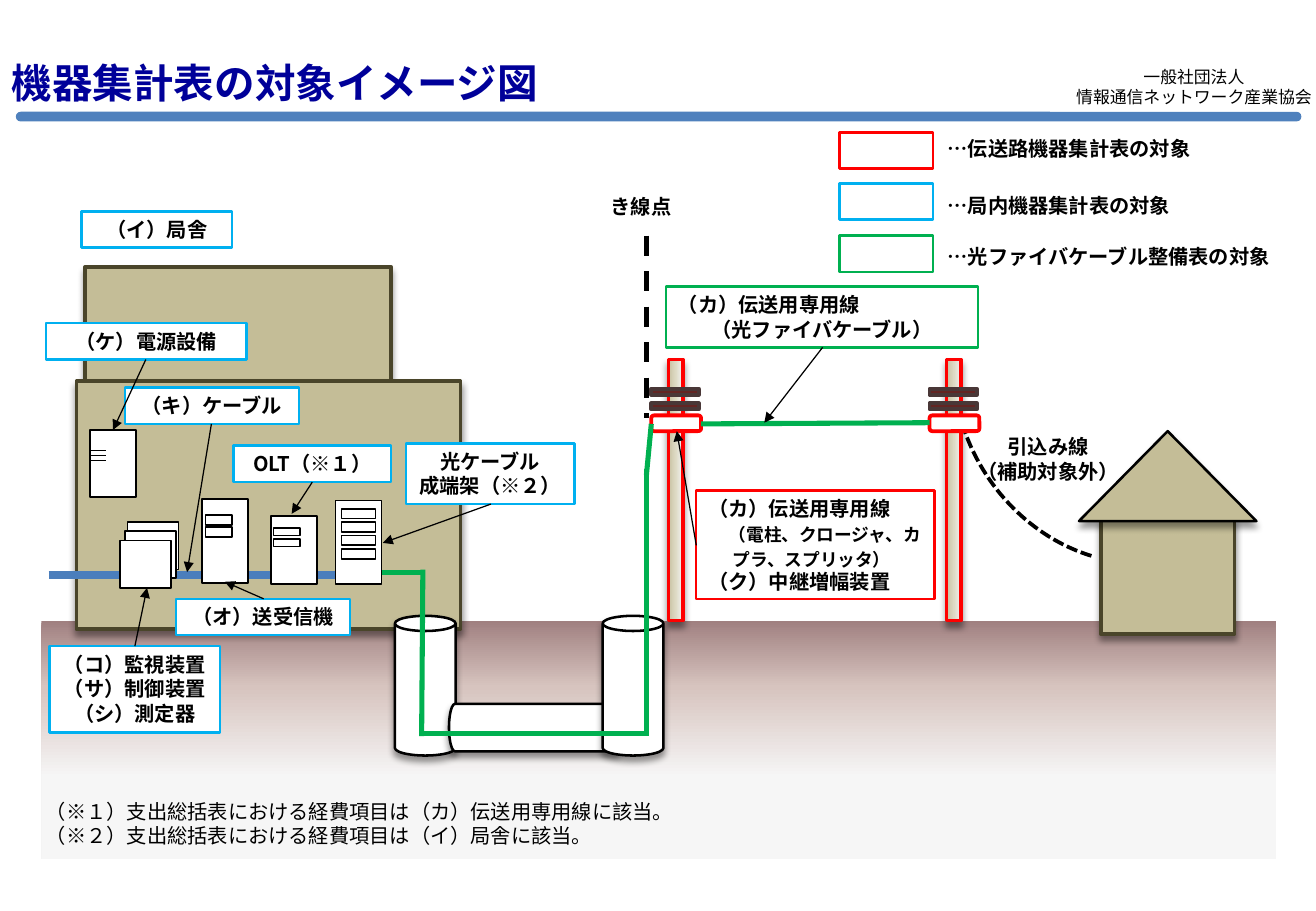
from dataclasses import dataclass

from lxml.etree import SubElement
from pptx import Presentation
from pptx.dml.color import RGBColor
from pptx.enum.dml import MSO_LINE
from pptx.enum.shapes import MSO_CONNECTOR, MSO_SHAPE
from pptx.enum.text import MSO_ANCHOR, PP_ALIGN
from pptx.oxml import parse_xml
from pptx.oxml.ns import nsdecls, qn
from pptx.util import Inches, Pt


@dataclass
class Theme:
    font: str = "Noto Sans CJK JP"
    title: float = 24
    body: float = 12
    detail: float = 10.5
    small: float = 10
    leading: float = 1.2
    black: str = "000000"
    white: str = "FFFFFF"
    navy: str = "000099"
    bar: str = "4F81BD"
    cable: str = "4B7EBC"
    red: str = "FF0000"
    blue: str = "00B0F0"
    green: str = "00B050"
    wall: str = "C4BD97"
    wall_edge: str = "4A452A"
    arm: str = "632523"
    arm_edge: str = "493737"
    ground: tuple = ((0, "A08080"), (28, "D7C4BF"), (66, "F6F6F6"))
    pole: tuple = ((0, "C8C1A2"), (50, "DDD9C3"), (100, "F2F2F2"))


class Diagram:
    def __init__(self, slide, theme):
        self.s = slide
        self.t = theme

    def paint(self, sp, fill, line, width, dash=None):
        if fill:
            sp.fill.solid()
            sp.fill.fore_color.rgb = RGBColor.from_string(fill)
        else:
            sp.fill.background()
        self.stroke(sp, line, width, dash)

    def stroke(self, sp, color, width, dash=None):
        if not color:
            sp.line.fill.background()
            return
        sp.line.color.rgb = RGBColor.from_string(color)
        sp.line.width = Pt(width)
        if dash:
            sp.line.dash_style = dash

    def shape(self, box, fill=None, line=None, width=1, kind=MSO_SHAPE.RECTANGLE,
              shadow=False, rotation=0, adj=(), dash=None):
        sp = self.s.shapes.add_shape(kind, *map(Inches, box))
        sp.shadow.inherit = False
        sp.rotation = rotation
        for i, value in enumerate(adj):
            sp.adjustments[i] = value
        self.paint(sp, fill, line, width, dash)
        if shadow:
            effects = sp._element.spPr.find(qn("a:effectLst"))
            effects.append(parse_xml(
                f'<a:outerShdw {nsdecls("a")} blurRad="50800" dist="38100" dir="5400000" '
                'rotWithShape="0"><a:srgbClr val="000000"><a:alpha val="40000"/>'
                '</a:srgbClr></a:outerShdw>'))
        return sp

    def gradient(self, sp, stops, angle):
        gs = "".join(f'<a:gs pos="{pos * 1000}"><a:srgbClr val="{color}"/></a:gs>'
                     for pos, color in stops)
        spPr = sp._element.spPr
        spPr.replace(spPr.find(qn("a:noFill")), parse_xml(
            f'<a:gradFill {nsdecls("a")} rotWithShape="1"><a:gsLst>{gs}</a:gsLst>'
            f'<a:lin ang="{angle * 60000}" scaled="0"/></a:gradFill>'))

    def line(self, start, end, color, width, arrow=False, dash=None):
        c = self.s.shapes.add_connector(
            MSO_CONNECTOR.STRAIGHT, *map(Inches, (*start, *end)))
        self.stroke(c, color, width, dash)
        if arrow:
            SubElement(c.line._get_or_add_ln(), qn("a:tailEnd"), type="triangle")
        SubElement(c._element.spPr, qn("a:effectLst"))

    def text(self, box, lines, align=PP_ALIGN.LEFT, size=None, bold=True, color=None,
             fill=None, line=None):
        sp = self.s.shapes.add_textbox(*map(Inches, box))
        self.paint(sp, fill, line, 1.5)
        tf = sp.text_frame
        tf.word_wrap = True
        size = size or self.t.body
        for i, content in enumerate(lines):
            p = tf.paragraphs[0] if i == 0 else tf.add_paragraph()
            p.add_run().text = content
            p.alignment = align
            p.line_spacing = Pt(size * self.t.leading)
            p.font.size = Pt(size)
            p.font.bold = bold
            p.font.color.rgb = RGBColor.from_string(color or self.t.black)
            p.font.name = self.t.font
            SubElement(p._p.pPr.find(qn("a:defRPr")), qn("a:ea"), typeface=self.t.font)
        return tf

    def label(self, box, *lines, line=None, fill=None):
        return self.text(box, lines, PP_ALIGN.CENTER, line=line, fill=fill)

    def building(self, box):
        self.shape(box, self.t.wall, self.t.wall_edge, 2.25, shadow=True)

    def cabinet(self, box, slots=()):
        for part in (box, *slots):
            self.shape(part, self.t.white, self.t.black, 1)

    def pole(self, x):
        t = self.t
        post = self.shape((x + 0.14, 2.96, 0.12, 2.15), None, t.red, 2, shadow=True)
        self.gradient(post, t.pole, 0)
        for y in (3.2, 3.32):
            self.shape((x, y, 0.39, 0.05), t.arm, t.arm_edge, 2.25)
        self.shape((x, 3.42, 0.41, 0.13), t.white, t.red, 2.25, MSO_SHAPE.ROUNDED_RECTANGLE)

    def pipe(self, box, rotation=0):
        self.shape(box, self.t.white, self.t.black, 1.5, MSO_SHAPE.CAN, True, rotation)


def main():
    prs = Presentation()
    prs.slide_width, prs.slide_height = Inches(10.83), Inches(7.5)
    t = Theme()
    d = Diagram(prs.slides.add_slide(prs.slide_layouts[6]), t)

    tf = d.text((8.83, 0.48, 1.99, 0.47), ["一般社団法人", "情報通信ネットワーク産業協会"],
                PP_ALIGN.CENTER, t.small, False)
    tf.margin_left = tf.margin_right = 0
    tf.word_wrap = False
    tf.vertical_anchor = MSO_ANCHOR.MIDDLE
    d.shape((0.13, 0.92, 10.58, 0.08), t.bar, kind=MSO_SHAPE.ROUNDED_RECTANGLE, adj=(0.5,))
    d.text((0, 0.43, 10.81, 0.5), ["機器集計表の対象イメージ図"], size=t.title, color=t.navy)

    d.building((0.7, 2.2, 2.52, 1.16))
    d.shape((7.89, 1.65, 2.66, 3.03), None, t.black, 2.25, MSO_SHAPE.ARC, rotation=150,
            adj=(185.76, 10.77), dash=MSO_LINE.SQUARE_DOT)
    d.gradient(d.shape((0.34, 5.11, 10.16, 1.96)), t.ground, 90)
    d.building((0.63, 3.14, 3.16, 2.04))

    legend = [(1.09, 1.07, t.red, "…伝送路機器集計表の対象"),
              (1.51, 1.54, t.blue, "…局内機器集計表の対象"),
              (1.94, 1.96, t.green, "…光ファイバケーブル整備表の対象")]
    for key_y, text_y, color, name in legend:
        d.shape((6.91, key_y, 0.77, 0.3), None, color, 1.5)
        d.text((7.7, text_y, 3.06, 0.3), [name])

    d.cabinet((0.74, 3.54, 0.38, 0.55))
    for y in (3.71, 3.75, 3.79):
        d.line((0.74, y), (0.87, y), t.black, 0.75)
    d.line((0.4, 4.73), (2.81, 4.73), t.cable, 4.75)
    for x in (5.36, 7.65):
        d.pole(x)
    d.line((5.32, 3.91), (5.36, 3.49), t.green, 3)
    d.line((5.77, 3.49), (7.65, 3.48), t.green, 3)

    d.label((0.67, 1.74, 1.24, 0.3), "（イ）局舎", line=t.blue)
    for box, lines in [
        ((1.03, 3.19, 1.43, 0.3), ["（キ）ケーブル"]),
        ((1.45, 4.93, 1.43, 0.3), ["（オ）送受信機"]),
        ((0.41, 5.32, 1.4, 0.71), ["（コ）監視装置", "（サ）制御装置", "（シ）測定器"]),
        ((0.38, 2.66, 1.65, 0.3), ["（ケ）電源設備"]),
        ((1.92, 3.67, 1.3, 0.3), ["OLT（※１）"]),
        ((3.34, 3.65, 1.39, 0.5), ["光ケーブル", "成端架（※２）"]),
    ]:
        d.label(box, *lines, line=t.blue, fill=t.white)
    tf = d.label((5.48, 2.36, 2.57, 0.5), "（カ）伝送用専用線", "（光ファイバケーブル）", line=t.green)
    tf.paragraphs[0].alignment = PP_ALIGN.LEFT
    tf = d.text((5.73, 4.04, 1.96, 0.89),
                ["（カ）伝送用専用線", "（電柱、クロージャ、カプラ、スプリッタ）", "（ク）中継増幅装置"],
                line=t.red)
    p = tf.paragraphs[1]
    p.font.size = Pt(t.detail)
    p._p.pPr.set("marL", str(Inches(0.2)))
    p._p.pPr.set("indent", str(Inches(-0.03)))
    d.label((7.92, 3.53, 1.41, 0.5), "引込み線", "（補助対象外）")
    d.label((4.57, 1.55, 1.41, 0.3), "き線点")

    for x, y in ((1.05, 4.3), (1.03, 4.37), (0.99, 4.45)):
        d.cabinet((x, y, 0.42, 0.39))
    d.cabinet((2.23, 4.25, 0.38, 0.56), [(2.25, y, 0.22, 0.06) for y in (4.35, 4.44)])
    d.cabinet((1.66, 4.11, 0.38, 0.69), [(1.69, y, 0.22, 0.08) for y in (4.24, 4.34)])

    for start, end in [
        ((4.04, 4.15), (3.15, 4.47)), ((1.74, 3.49), (1.54, 4.71)),
        ((1.2, 2.96), (0.93, 3.54)), ((1.11, 5.32), (1.21, 4.84)),
        ((2.17, 4.93), (1.85, 4.79)), ((6.77, 2.86), (6.29, 3.48)),
        ((5.73, 4.49), (5.57, 3.55)), ((2.57, 3.97), (2.4, 4.23)),
    ]:
        d.line(start, end, t.black, 0.75, arrow=True)

    d.pipe((3.25, 5.07, 0.5, 1.15))
    d.pipe((4.21, 5.28, 0.39, 1.42), 90)
    d.pipe((4.96, 5.07, 0.5, 1.15))
    d.line((3.05, 4.71), (3.5, 4.71), t.green, 3)
    d.cabinet((2.76, 4.12, 0.38, 0.69),
              [(2.81, 4.19 + 0.11 * i, 0.28, 0.08) for i in range(4)])
    for start, end in [((3.48, 4.69), (3.47, 6.06)), ((5.34, 6.04), (3.46, 6.04)),
                       ((5.32, 3.86), (5.32, 6.05))]:
        d.line(start, end, t.green, 3)

    d.building((9.06, 4.27, 1.1, 0.95))
    d.shape((8.88, 3.55, 1.46, 0.74), t.wall, t.black, 1.5, MSO_SHAPE.ISOSCELES_TRIANGLE, True)
    d.line((5.32, 1.94), (5.32, 3.44), t.black, 3, dash=MSO_LINE.DASH)
    d.text((0.28, 6.53, 10, 0.5),
           ["（※１）支出総括表における経費項目は（カ）伝送用専用線に該当。",
            "（※２）支出総括表における経費項目は（イ）局舎に該当。"], bold=False)

    prs.save("out.pptx")


if __name__ == "__main__":
    main()
